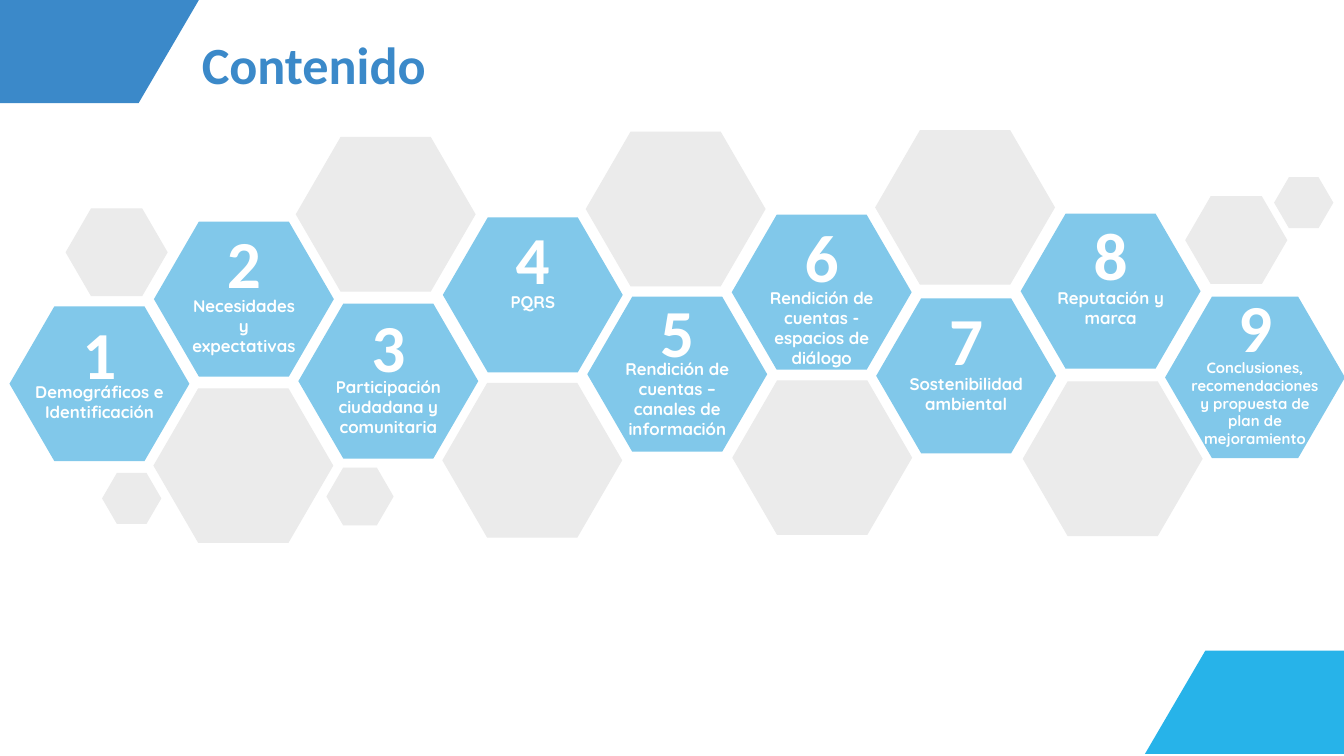
"""Build the "Contenido" slide: nine numbered topics on a honeycomb."""

from pptx import Presentation
from pptx.dml.color import RGBColor
from pptx.enum.shapes import MSO_SHAPE as Shape
from pptx.enum.text import MSO_ANCHOR as Anchor, MSO_AUTO_SIZE as AutoSize, PP_ALIGN as Align
from pptx.util import Cm, Pt

BLUE = RGBColor(0x3B, 0x89, 0xC9)
CYAN = RGBColor(0x27, 0xB3, 0xE9)
SKY = RGBColor(0x81, 0xC8, 0xEA)
GREY = RGBColor(0xEB, 0xEB, 0xEB)
WHITE = RGBColor(0xFF, 0xFF, 0xFF)

HEXAGON_WIDTH = 3.4
HEXAGON_RATIO = 0.86
COLUMN_START = 0.18
COLUMN_STEP = 2.73
NUMBER_WIDTH = 1.57


def add_hexagon(shapes, left, top, width, height, color):
    shape = shapes.add_shape(Shape.HEXAGON, Cm(left), Cm(top), Cm(width), Cm(height))
    shape.adjustments[0] = 0.29
    shape.shadow.inherit = False
    shape.fill.solid()
    shape.fill.fore_color.rgb = color
    shape.line.fill.background()


def add_centred_text(shapes, center, top, width, text, font_name, size):
    box = shapes.add_textbox(Cm(center - width / 2), Cm(top), Cm(width), Cm(1.24))
    box.text_frame.word_wrap = True
    paragraph = box.text_frame.paragraphs[0]
    paragraph.text = text
    paragraph.alignment = Align.CENTER
    paragraph.font.name = font_name
    paragraph.font.size = Pt(size)
    paragraph.font.bold = True
    paragraph.font.color.rgb = WHITE


presentation = Presentation()
presentation.slide_width = Cm(25.4)
presentation.slide_height = Cm(14.29)
slide = presentation.slides.add_slide(presentation.slide_layouts[5])

corners = [
    (BLUE, [(0, 0), (3.76, 0), (2.62, 1.95), (0, 1.95)]),
    (CYAN, [(22.78, 12.3), (25.4, 12.3), (25.4, 14.25), (21.64, 14.25)]),
]
for color, points in corners:
    vertices = [(Cm(x), Cm(y)) for x, y in points]
    builder = slide.shapes.build_freeform(*vertices[0])
    builder.add_line_segments(vertices[1:], close=True)
    corner = builder.convert_to_shape()
    corner.shadow.inherit = False
    corner.fill.solid()
    corner.fill.fore_color.rgb = color
    corner.line.fill.background()

title = slide.shapes.title
title.left, title.top, title.width, title.height = Cm(3.56), Cm(0.48), Cm(11.35), Cm(1.45)
title.text_frame.text = "Contenido"
title.text_frame.vertical_anchor = Anchor.TOP
title.text_frame.auto_size = AutoSize.NONE
heading = title.text_frame.paragraphs[0]
heading.alignment = Align.LEFT
heading.font.name = "Calibri"
heading.font.size = Pt(28)
heading.font.bold = True
heading.font.color.rgb = BLUE

grey_hexagons = [
    (5.59, 2.59, HEXAGON_WIDTH),
    (11.07, 2.49, HEXAGON_WIDTH),
    (16.54, 2.46, HEXAGON_WIDTH),
    (2.9, 7.34, HEXAGON_WIDTH),
    (8.36, 7.24, HEXAGON_WIDTH),
    (13.84, 7.19, HEXAGON_WIDTH),
    (19.33, 7.21, HEXAGON_WIDTH),
    (1.24, 3.94, 1.93),
    (22.4, 3.71, 1.93),
    (6.17, 8.84, 1.27),
    (24.08, 3.35, 1.12),
    (1.93, 8.94, 1.12),
]
for left, top, width in grey_hexagons:
    add_hexagon(slide.shapes, left, top, width, width * HEXAGON_RATIO, GREY)

topics = [
    ("Demográficos e Identificación", 5.79, 2.93, 5.77, 7.09, 2.97, 9),
    ("Necesidades y expectativas", 4.19, 2.93, 4.06, 5.46, 2.62, 9),
    ("Participación ciudadana y comunitaria", 5.74, 2.93, 5.64, 6.99, 2.95, 9),
    ("PQRS", 4.11, 2.93, 3.99, 5.38, 2.34, 9),
    ("Rendición de cuentas – canales de información", 5.61, 2.93, 5.36, 6.65, 2.95, 9),
    ("Rendición de cuentas - espacios de diálogo", 4.06, 2.93, 3.94, 5.31, 2.49, 9),
    ("Sostenibilidad ambiental", 5.64, 2.93, 5.51, 6.93, 3, 9),
    ("Reputación y marca", 4.04, 2.93, 3.91, 5.31, 3, 9),
    ("Conclusiones, recomendaciones y propuesta de plan de mejoramiento",
     5.61, 3.05, 5.26, 6.65, 3.15, 8),
]
for index, (label, top, height, number_top, label_top, label_width, size) in enumerate(topics):
    left = COLUMN_START + COLUMN_STEP * index
    center = left + HEXAGON_WIDTH / 2
    shapes = slide.shapes.add_group_shape().shapes
    add_hexagon(shapes, left, top, HEXAGON_WIDTH, height, SKY)
    add_centred_text(shapes, center, number_top, NUMBER_WIDTH, str(index + 1), "Calibri", 36)
    add_centred_text(shapes, center, label_top, label_width, label, "Quicksand", size)

presentation.save("out.pptx")
